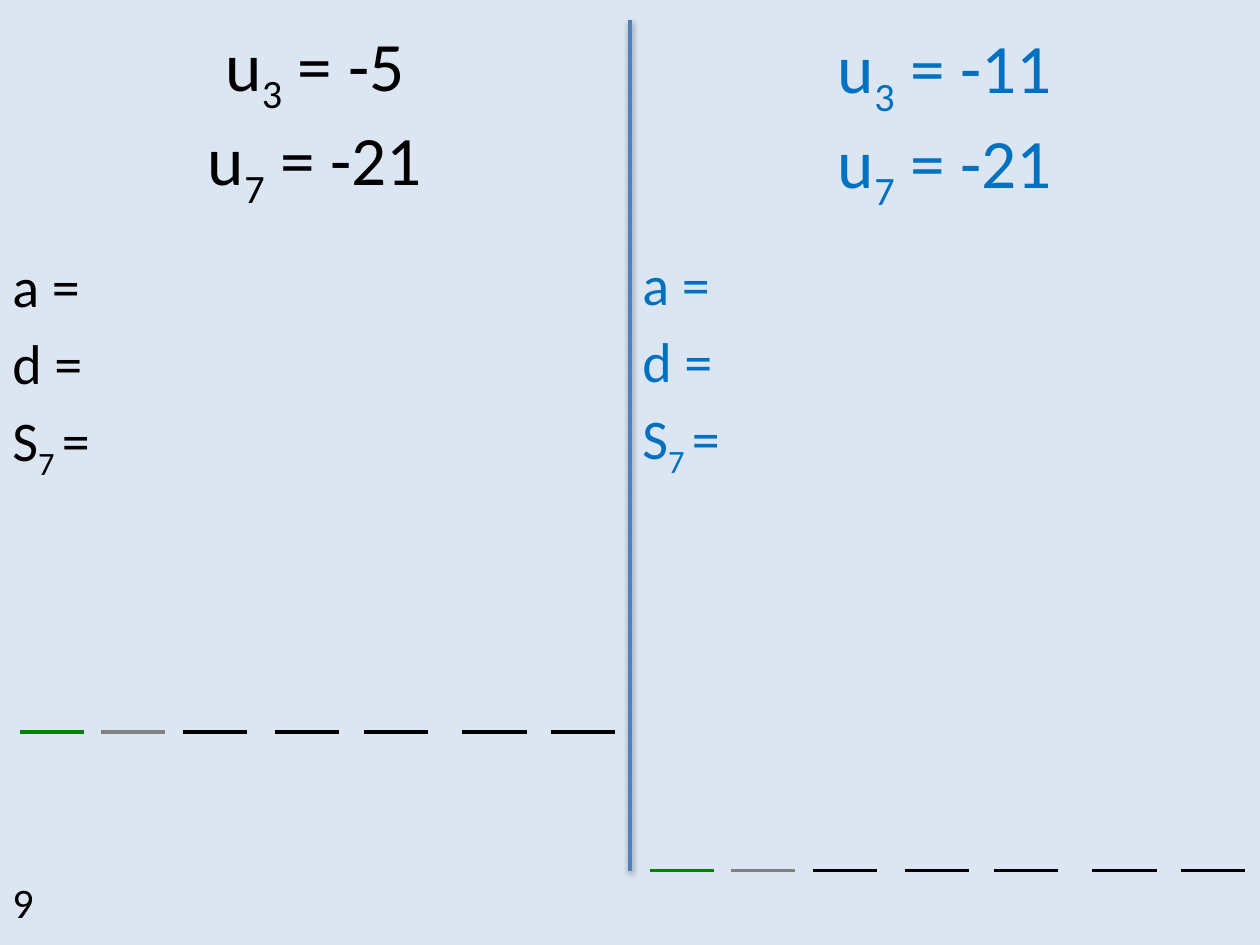
from dataclasses import dataclass

from lxml.etree import SubElement
from pptx import Presentation
from pptx.dml.color import RGBColor
from pptx.enum.shapes import MSO_CONNECTOR
from pptx.enum.text import MSO_ANCHOR, MSO_AUTO_SIZE, PP_ALIGN
from pptx.oxml.ns import qn
from pptx.shapes.base import BaseShape
from pptx.slide import Slide
from pptx.util import Inches, Pt


@dataclass(frozen=True)
class Theme:
    font: str = "Calibri"
    background: str = "DCE6F2"
    black: str = "000000"
    blue: str = "0070C0"
    green: str = "008000"
    gray: str = "808080"
    divider: str = "4F81BD"
    heading_size: float = 39.6
    body_size: float = 32
    number_size: float = 24
    line_width: float = 2


@dataclass(frozen=True)
class Panel:
    left: float
    heading_top: float
    unknowns_top: float
    blanks_top: float
    heading: str
    color: str


THEME = Theme()
PANEL_WIDTH = 5
UNKNOWNS = ("a =", "d =", "S|7 |=")
BLANK_LENGTH = 0.51
BLANK_OFFSETS = (0.16, 0.8, 1.45, 2.18, 2.89, 3.67, 4.37)
BLANK_COLORS = (THEME.green, THEME.gray) + (THEME.black,) * 5
PANELS = (
    Panel(0, 0.3, 1.95, 5.81, "u|3| = -5\nu|7| = -21", THEME.black),
    Panel(5, 0.32, 1.93, 6.91, "u|3| = -11\nu|7| = -21", THEME.blue),
)


def write_text(holder: BaseShape, *paragraphs: str, size: float, color: str,
               align: PP_ALIGN = PP_ALIGN.LEFT,
               anchor: MSO_ANCHOR = MSO_ANCHOR.TOP, gap: float = 0) -> None:
    frame = holder.text_frame
    frame.word_wrap = True
    frame.auto_size = MSO_AUTO_SIZE.NONE
    frame.vertical_anchor = anchor
    for index, content in enumerate(paragraphs):
        paragraph = frame.add_paragraph() if index else frame.paragraphs[0]
        paragraph.alignment = align
        paragraph.space_before = Pt(gap if index else 0)
        for row, line in enumerate(content.split("\n")):
            if row:
                paragraph.add_line_break()
            for position, piece in enumerate(line.split("|")):
                run = paragraph.add_run()
                run.text = piece
                run.font.name = THEME.font
                run.font.size = Pt(size)
                run.font.color.rgb = RGBColor.from_string(color)
                if position % 2:
                    run._r.get_or_add_rPr().set("baseline", "-25000")


def add_box(slide: Slide, left: float, top: float, width: float, height: float) -> BaseShape:
    return slide.shapes.add_textbox(Inches(left), Inches(top), Inches(width), Inches(height))


def add_line(slide: Slide, start: tuple[float, float], end: tuple[float, float],
             color: str, shadow: bool = False) -> None:
    line = slide.shapes.add_connector(
        MSO_CONNECTOR.STRAIGHT, *(Inches(value) for value in start + end))
    line.line.color.rgb = RGBColor.from_string(color)
    line.line.width = Pt(THEME.line_width)
    effects = SubElement(line._element.spPr, qn("a:effectLst"))
    if shadow:
        outer = SubElement(effects, qn("a:outerShdw"), blurRad="40000", dist="20000",
                           dir="5400000", rotWithShape="0")
        tint = SubElement(outer, qn("a:srgbClr"), val=THEME.black)
        SubElement(tint, qn("a:alpha"), val="38000")


def add_heading(slide: Slide, panel: Panel) -> None:
    if panel is PANELS[0]:
        heading = slide.shapes.title
        heading.left, heading.top = Inches(panel.left), Inches(panel.heading_top)
        heading.width, heading.height = Inches(PANEL_WIDTH), Inches(1.25)
    else:
        heading = add_box(slide, panel.left, panel.heading_top, PANEL_WIDTH, 1.25)
    write_text(heading, panel.heading, size=THEME.heading_size, color=panel.color,
               align=PP_ALIGN.CENTER, anchor=MSO_ANCHOR.MIDDLE)


def add_panel(slide: Slide, panel: Panel) -> None:
    add_heading(slide, panel)
    unknowns = add_box(slide, panel.left, panel.unknowns_top, PANEL_WIDTH, 4.95)
    write_text(unknowns, *UNKNOWNS, size=THEME.body_size, color=panel.color, gap=5.6)
    for offset, color in zip(BLANK_OFFSETS, BLANK_COLORS):
        start = panel.left + offset
        add_line(slide, (start, panel.blanks_top),
                 (start + BLANK_LENGTH, panel.blanks_top), color)


def main() -> None:
    deck = Presentation()
    deck.slide_width, deck.slide_height = Inches(10), Inches(7.5)
    slide = deck.slides.add_slide(deck.slide_layouts[5])
    slide.background.fill.solid()
    slide.background.fill.fore_color.rgb = RGBColor.from_string(THEME.background)
    for panel in PANELS:
        add_panel(slide, panel)
    add_line(slide, (PANEL_WIDTH, 0.16), (PANEL_WIDTH, 6.91), THEME.divider, shadow=True)
    question_number = add_box(slide, 0, 6.91, 1.04, 0.5)
    write_text(question_number, "9", size=THEME.number_size, color=THEME.black)
    deck.save("out.pptx")


if __name__ == "__main__":
    main()
